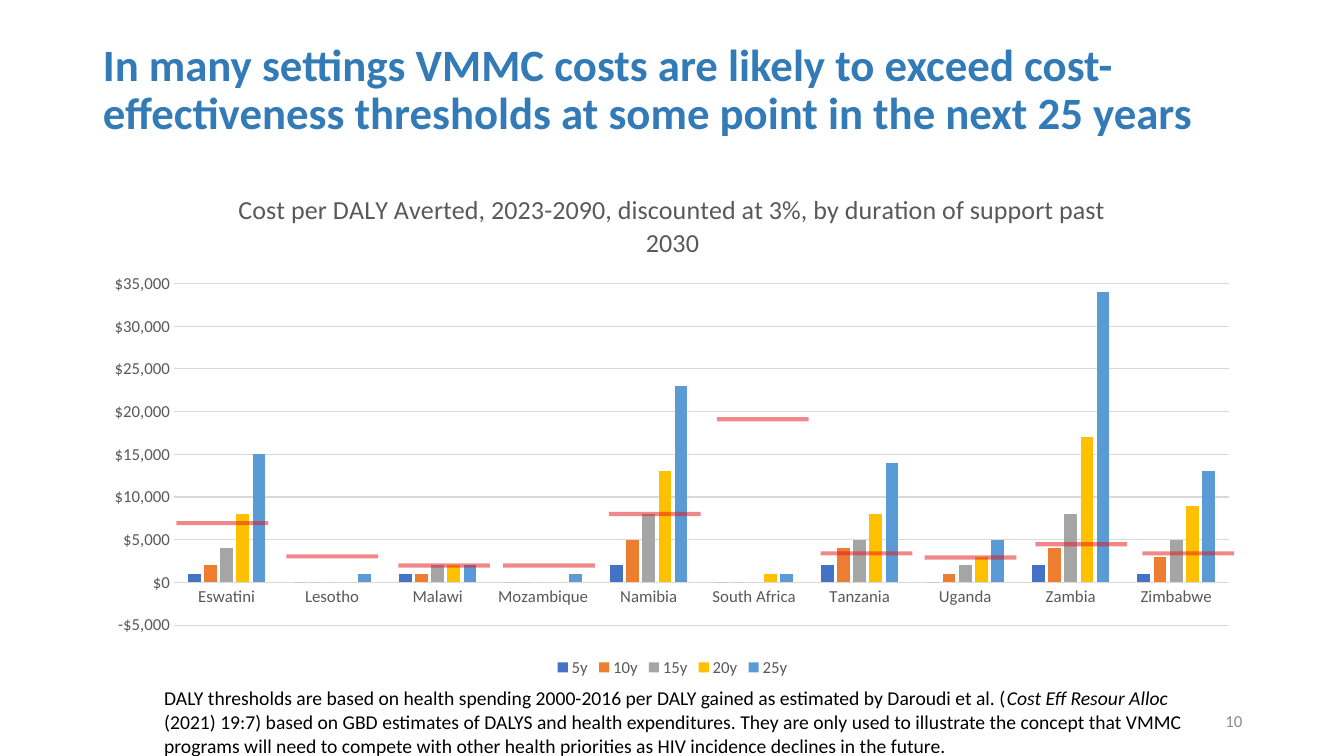
from lxml import etree
from pptx import Presentation, util as u
from pptx.chart.data import CategoryChartData
from pptx.dml.color import RGBColor
from pptx.enum import chart as c, shapes, text
from pptx.oxml import parse_xml
from pptx.oxml.ns import nsdecls, qn

PX = 9144
COUNTRIES = ["Eswatini", "Lesotho", "Malawi", "Mozambique", "Namibia",
             "South Africa", "Tanzania", "Uganda", "Zambia", "Zimbabwe"]
SERIES = [
    ("5y", "4472C4", [1000, 0, 1000, 0, 2000, 0, 2000, 0, 2000, 1000]),
    ("10y", "ED7D31", [2000, 0, 1000, 0, 5000, 0, 4000, 1000, 4000, 3000]),
    ("15y", "A5A5A5", [4000, 0, 2000, 0, 8000, 0, 5000, 2000, 8000, 5000]),
    ("20y", "FFC000", [8000, 0, 2000, 0, 13000, 1000, 8000, 3000, 17000, 9000]),
    ("25y", "5B9BD5", [15000, 1000, 2000, 1000, 23000, 1000, 14000, 5000, 34000, 13000]),
]
THRESHOLDS = [(175, 519), (284, 552), (395, 561), (499, 561), (604, 510),
              (711, 416), (814, 549), (917, 553), (1027, 540), (1133, 549)]
THRESHOLD_WIDTH = 91
PLOT_AREA = {"x": 0.07, "y": 0.22, "w": 0.91, "h": 0.67}


def colour(value):
    return RGBColor.from_string(value)


def apply(target, values):
    for name, value in values.items():
        setattr(target, name, value)


class CostSlide:
    """Holds the style and the current slide, and adds each kind of element."""

    font_name = "Calibri"
    grey = "595959"
    grid = "D9D9D9"

    def __init__(self, presentation):
        self.slide = presentation.slides.add_slide(presentation.slide_layouts[5])

    def box(self, *lengths):
        return [length * PX for length in lengths]

    def font(self, font, size, fill, **values):
        apply(font, {"name": self.font_name, "size": u.Pt(size), **values})
        font.color.rgb = colour(fill)

    def line(self, line, fill, width):
        line.color.rgb = colour(fill)
        line.width = u.Pt(width)

    def title(self, wording, box):
        shape = self.slide.shapes.title
        apply(shape, dict(zip(("left", "top", "width", "height"), self.box(*box))))
        apply(shape.text_frame, {"vertical_anchor": text.MSO_ANCHOR.MIDDLE,
                                 "word_wrap": True,
                                 "auto_size": text.MSO_AUTO_SIZE.NONE})
        paragraph = shape.text_frame.paragraphs[0]
        apply(paragraph, {"alignment": text.PP_ALIGN.LEFT, "line_spacing": 0.9})
        run = paragraph.add_run()
        run.text = wording
        self.font(run.font, 32, "327BB6", bold=True)

    def text_box(self, runs, box, size, fill="000000", align=text.PP_ALIGN.LEFT,
                 anchor=text.MSO_ANCHOR.TOP):
        frame = self.slide.shapes.add_textbox(*self.box(*box)).text_frame
        apply(frame, {"word_wrap": True, "vertical_anchor": anchor})
        paragraph = frame.paragraphs[0]
        paragraph.alignment = align
        for wording, italic in runs:
            run = paragraph.add_run()
            run.text = wording
            self.font(run.font, size, fill, italic=italic)

    def threshold(self, left, top):
        connector = self.slide.shapes.add_connector(
            shapes.MSO_CONNECTOR.STRAIGHT,
            *self.box(left, top, left + THRESHOLD_WIDTH, top))
        self.line(connector.line, "E31315", 3)
        properties = connector._element.spPr
        etree.SubElement(next(properties.iter(qn("a:srgbClr"))),
                         qn("a:alpha"), val="50000")
        etree.SubElement(properties, qn("a:effectLst"))

    def place_plot(self, chart):
        area = chart._chartSpace.chart.plotArea
        for layout in area.findall(qn("c:layout")):
            area.remove(layout)
        sides = "".join(f'<c:{side} val="{share}"/>' for side, share in PLOT_AREA.items())
        area.insert(0, parse_xml(
            f'<c:layout {nsdecls("c")}><c:manualLayout><c:layoutTarget val="inner"/>'
            f'<c:xMode val="edge"/><c:yMode val="edge"/>{sides}'
            '</c:manualLayout></c:layout>'))

    def chart(self, heading, box):
        data = CategoryChartData(number_format='"$"#,##0')
        data.categories = COUNTRIES
        for name, _, values in SERIES:
            data.add_series(name, values)
        chart = self.slide.shapes.add_chart(
            c.XL_CHART_TYPE.COLUMN_CLUSTERED, *self.box(*box), data).chart
        self.font(chart.font, 12, self.grey)

        chart.has_title = True
        run = chart.chart_title.text_frame.paragraphs[0].add_run()
        run.text = heading
        self.font(run.font, 18.6, self.grey, bold=False)
        chart.chart_title.include_in_layout = False

        chart.has_legend = True
        apply(chart.legend, {"position": c.XL_LEGEND_POSITION.BOTTOM,
                             "include_in_layout": False})
        self.font(chart.legend.font, 12, self.grey)

        plot = chart.plots[0]
        apply(plot, {"gap_width": 219, "overlap": -27, "vary_by_categories": False})
        for series, (_, fill, _) in zip(plot.series, SERIES):
            series.invert_if_negative = False
            series.format.fill.solid()
            series.format.fill.fore_color.rgb = colour(fill)

        for axis in (chart.category_axis, chart.value_axis):
            apply(axis, {"major_tick_mark": c.XL_TICK_MARK.NONE,
                         "minor_tick_mark": c.XL_TICK_MARK.NONE})
            self.font(axis.tick_labels.font, 12, self.grey)
        self.line(chart.category_axis.format.line, self.grid, 0.75)
        axis = chart.value_axis
        apply(axis, {"minimum_scale": -5000, "maximum_scale": 35000,
                     "major_unit": 5000, "has_major_gridlines": True})
        apply(axis.tick_labels, {"number_format": '"$"#,##0',
                                 "number_format_is_linked": False})
        axis.format.line.fill.background()
        self.line(axis.major_gridlines.format.line, self.grid, 0.75)
        self.place_plot(chart)


def main():
    presentation = Presentation()
    apply(presentation, {"slide_width": 1333 * PX, "slide_height": 750 * PX})
    slide = CostSlide(presentation)
    slide.title("In many settings VMMC costs are likely to exceed cost-effectiveness "
                "thresholds at some point in the next 25 years", (92, 40, 1150, 100))
    slide.chart("Cost per DALY Averted, 2023-2090, discounted at 3%, "
                "by duration of support past 2030", (92, 170, 1150, 506))
    slide.text_box([("10", False)], (942, 695, 300, 40), 12, "8C8C8C",
                   text.PP_ALIGN.RIGHT, text.MSO_ANCHOR.MIDDLE)
    for left, top in THRESHOLDS:
        slide.threshold(left, top)
    slide.text_box([
        ("DALY thresholds are based on health spending 2000-2016 per DALY gained "
         "as estimated by Daroudi et al. (", False),
        ("Cost Eff Resour Alloc", True),
        (" (2021) 19:7) based on GBD estimates of DALYS and health expenditures. "
         "They are only used to illustrate the concept that VMMC programs will need "
         "to compete with other health priorities as HIV incidence declines in the "
         "future.", False),
    ], (153, 676, 1032, 81), 14)
    presentation.save("out.pptx")


if __name__ == "__main__":
    main()
